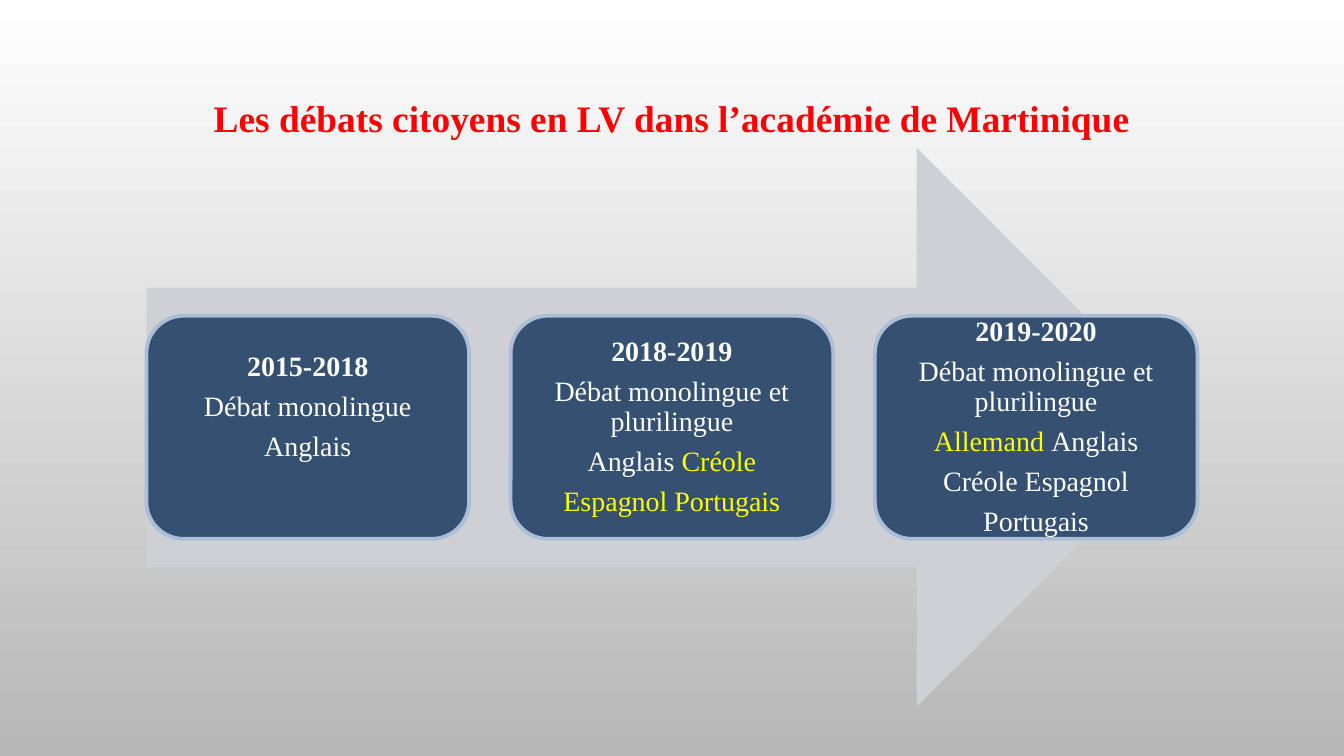
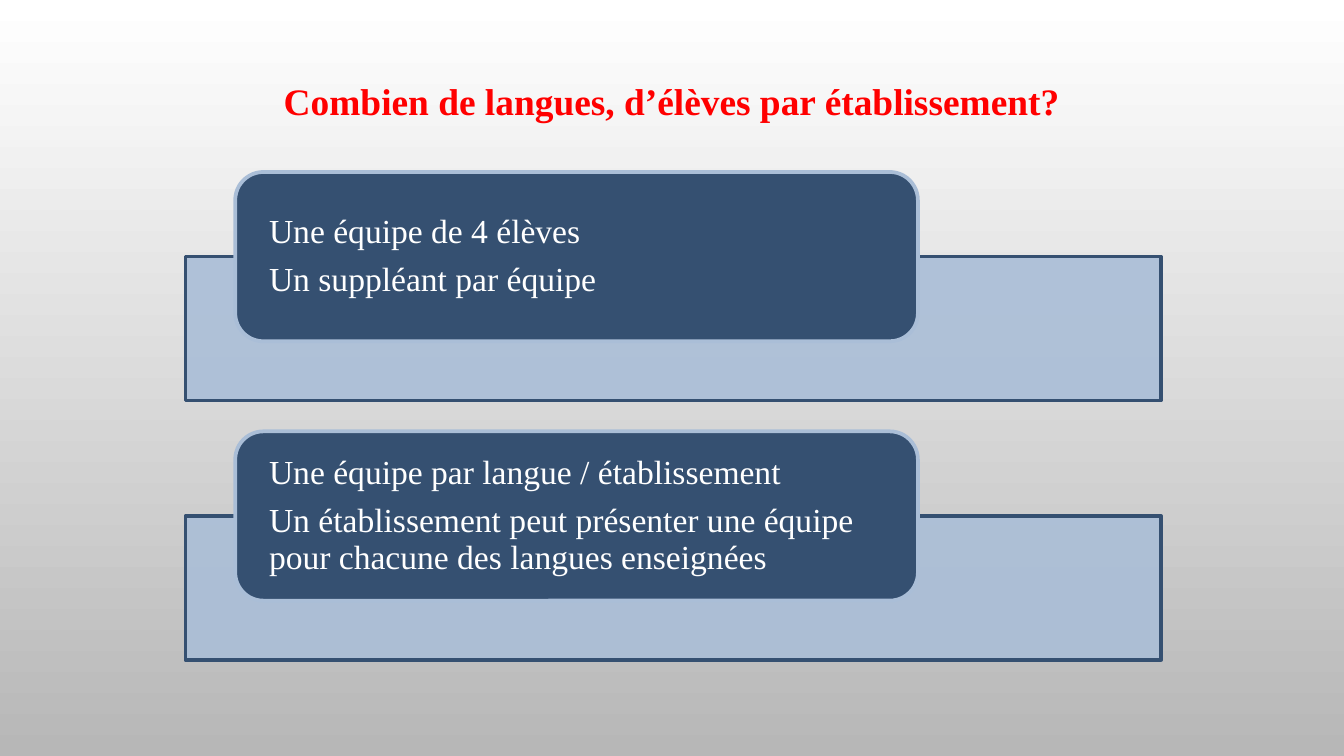
from dataclasses import dataclass

from lxml import etree
from pptx import Presentation
from pptx.dml.color import RGBColor
from pptx.enum.shapes import MSO_SHAPE
from pptx.enum.text import MSO_ANCHOR, MSO_AUTO_SIZE, PP_ALIGN
from pptx.oxml.ns import qn
from pptx.util import Emu, Pt

ARROW, RECT, ROUNDED = MSO_SHAPE.RIGHT_ARROW, MSO_SHAPE.RECTANGLE, MSO_SHAPE.ROUNDED_RECTANGLE
LEFT, CENTER = PP_ALIGN.LEFT, PP_ALIGN.CENTER
MIDDLE = MSO_ANCHOR.MIDDLE
FIT_TEXT = MSO_AUTO_SIZE.SHAPE_TO_FIT_TEXT

EMU_PER_PX = 4572  # 200 px to the inch
SLIDE_W, SLIDE_H = 2000, 1125


@dataclass(frozen=True)
class Theme:
    font: str = "Times New Roman"
    title: str = "FF0000"
    navy: str = "355071"
    pale_blue: str = "AABED7"
    arrow: str = "CED0D5"
    text: str = "FFFFFF"
    highlight: str = "FFFF00"
    sky: str = "FFFFFF"
    ground: str = "B7B7B7"
    title_pt: int = 20
    period_pt: int = 15
    rule_pt: int = 18
    border_pt: int = 2
    line_spacing: float = 0.9
    space_after: float = 0.35  # share of the type size


THEME = Theme()


@dataclass(frozen=True)
class Box:
    left: int
    top: int
    width: int
    height: int

    def moved(self, dx: int = 0, dy: int = 0) -> "Box":
        return Box(self.left + dx, self.top + dy, self.width, self.height)

    def emu(self) -> list[Emu]:
        return [px(n) for n in (self.left, self.top, self.width, self.height)]


@dataclass(frozen=True)
class Span:
    text: str
    color: str = THEME.text
    bold: bool = False


@dataclass(frozen=True)
class CardStyle:
    size: int
    align: PP_ALIGN
    inset_x: int
    inset_y: int


@dataclass(frozen=True)
class Card:
    lines: tuple[tuple[Span, ...], ...]
    lift: int = 0  # how far the text sits above the middle


PERIOD_STYLE = CardStyle(THEME.period_pt, CENTER, 12, 12)
RULE_STYLE = CardStyle(THEME.rule_pt, LEFT, 38, 0)


def px(length: int) -> Emu:
    return Emu(length * EMU_PER_PX)


def rgb(color: str) -> RGBColor:
    return RGBColor.from_string(color)


def format_run(run, size: int, color: str, bold: bool) -> None:
    run.font.name = THEME.font
    run.font.size = Pt(size)
    run.font.bold = bold
    run.font.color.rgb = rgb(color)


def add_slide(prs):
    slide = prs.slides.add_slide(prs.slide_layouts[6])
    fill = slide.background.fill
    fill.gradient()
    fill.gradient_angle = 270
    for stop, color, position in zip(fill.gradient_stops, (THEME.sky, THEME.ground), (0, 1)):
        stop.color.rgb = rgb(color)
        stop.position = position
    return slide


def add_title(slide, text: str, top: int, width: int) -> None:
    box = Box((SLIDE_W - width) // 2, top, width, 88)
    frame = slide.shapes.add_textbox(*box.emu()).text_frame
    frame.word_wrap = True
    frame.auto_size = FIT_TEXT
    frame.text = text
    paragraph = frame.paragraphs[0]
    paragraph.alignment = CENTER
    format_run(paragraph.runs[0], THEME.title_pt, THEME.title, True)


def add_panel(slide, kind: MSO_SHAPE, box: Box, fill: str, line: str = "", opacity: int = 100):
    panel = slide.shapes.add_shape(kind, *box.emu())
    panel.shadow.inherit = False
    panel.fill.solid()
    panel.fill.fore_color.rgb = rgb(fill)
    if opacity < 100:
        color = panel.fill._xPr.find(f"{qn('a:solidFill')}/{qn('a:srgbClr')}")
        etree.SubElement(color, qn("a:alpha")).set("val", str(opacity * 1000))
    if line:
        panel.line.color.rgb = rgb(line)
        panel.line.width = Pt(THEME.border_pt)
    else:
        panel.line.fill.background()
    return panel


def add_card(slide, box: Box, card: Card, style: CardStyle) -> None:
    frame = add_panel(slide, ROUNDED, box, THEME.navy, THEME.pale_blue).text_frame
    frame.word_wrap = True
    frame.vertical_anchor = MIDDLE
    frame.margin_left = frame.margin_right = px(style.inset_x)
    frame.margin_top = px(style.inset_y)
    frame.margin_bottom = px(style.inset_y + 2 * card.lift)
    for index, line in enumerate(card.lines):
        paragraph = frame.add_paragraph() if index else frame.paragraphs[0]
        paragraph.alignment = style.align
        paragraph.line_spacing = THEME.line_spacing
        paragraph.space_after = Pt(style.size * THEME.space_after)
        for span in line:
            run = paragraph.add_run()
            run.text = span.text
            format_run(run, style.size, span.color, span.bold)


def period(years: str, *lines: tuple[Span, ...], lift: int = 0) -> Card:
    return Card(((Span(years, bold=True),), *lines), lift)


def build_timeline(prs) -> None:
    both = (Span("Débat monolingue et plurilingue"),)
    periods = (
        period("2015-2018", (Span("Débat monolingue"),), (Span("Anglais"),), lift=30),
        period("2018-2019", both,
               (Span("Anglais "), Span("Créole", THEME.highlight)),
               (Span("Espagnol Portugais", THEME.highlight),)),
        period("2019-2020", both,
               (Span("Allemand ", THEME.highlight), Span("Anglais")),
               (Span("Créole Espagnol"),), (Span("Portugais"),)),
    )
    slide = add_slide(prs)
    # Arrow behind the three periods
    add_panel(slide, ARROW, Box(218, 220, 1562, 832), THEME.arrow)
    first_period = Box(218, 470, 480, 332)
    for index, card in enumerate(periods):
        add_card(slide, first_period.moved(dx=index * 542), card, PERIOD_STYLE)
    add_title(slide, "Les débats citoyens en LV dans l’académie de Martinique", 132, 1528)


def build_team_rules(prs) -> None:
    rules = (
        ("Une équipe de 4 élèves", "Un suppléant par équipe"),
        ("Une équipe par langue / établissement",
         "Un établissement peut présenter une équipe pour chacune des langues enseignées"),
    )
    slide = add_slide(prs)
    # Each rule card overlaps its pale band
    first_band, first_rule = Box(276, 382, 1452, 214), Box(350, 256, 1016, 252)
    for index, lines in enumerate(rules):
        drop = index * 386
        add_panel(slide, RECT, first_band.moved(dy=drop), THEME.pale_blue, THEME.navy, opacity=90)
        card = Card(tuple((Span(line),) for line in lines))
        add_card(slide, first_rule.moved(dy=drop), card, RULE_STYLE)
    add_title(slide, "Combien de langues, d’élèves par établissement?", 106, 1212)


def main() -> None:
    prs = Presentation()
    prs.slide_width, prs.slide_height = px(SLIDE_W), px(SLIDE_H)
    build_timeline(prs)
    build_team_rules(prs)
    prs.save("out.pptx")


if __name__ == "__main__":
    main()
